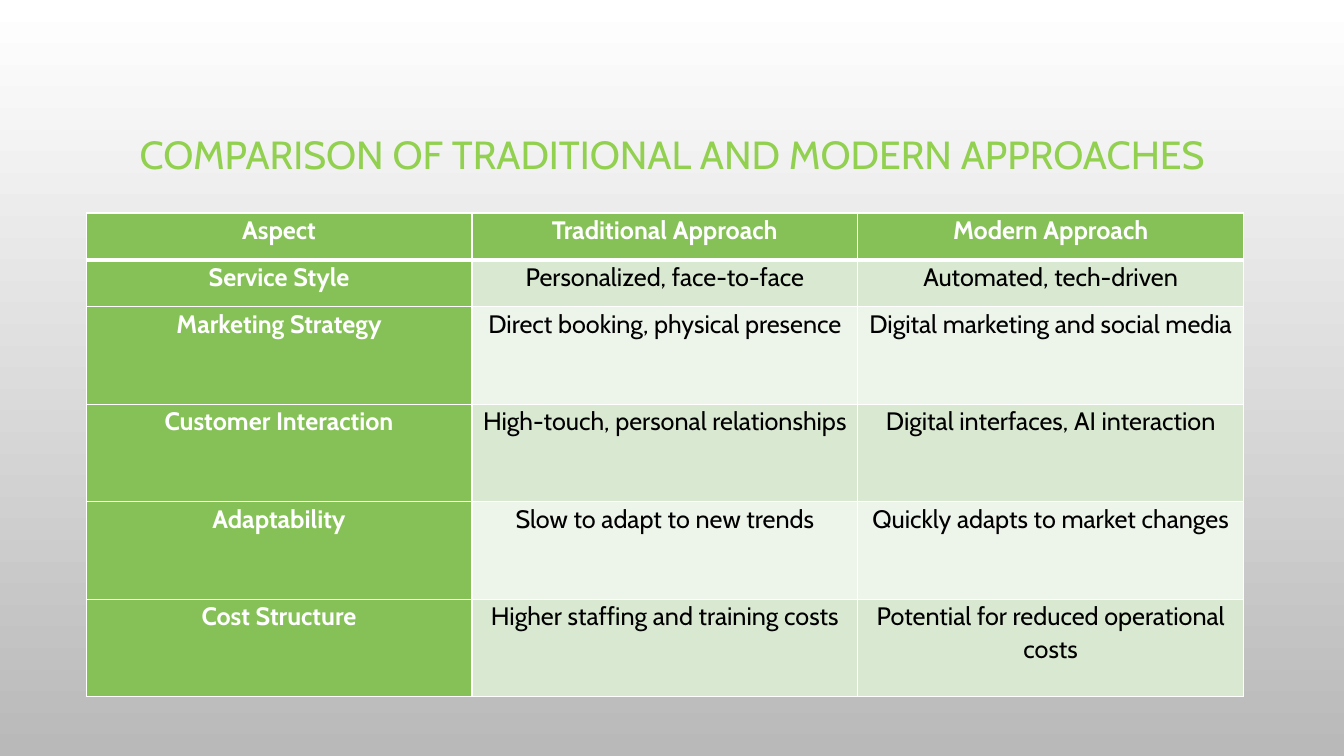
from lxml.etree import SubElement
from pptx import Presentation
from pptx.dml.color import RGBColor
from pptx.enum.text import MSO_ANCHOR, PP_ALIGN
from pptx.oxml.ns import qn
from pptx.util import Pt

COLORS = {
    "title": "92D050",
    "green": "86C157",
    "band_dark": "D9E9D1",
    "band_light": "EDF4EA",
    "white": "FFFFFF",
    "black": "000000",
    "gray": "B9B9B9",
}
ROWS = [
    ("Aspect", "Traditional Approach", "Modern Approach"),
    ("Service Style", "Personalized, face-to-face", "Automated, tech-driven"),
    ("Marketing Strategy", "Direct booking, physical presence", "Digital marketing and social media"),
    ("Customer Interaction", "High-touch, personal relationships", "Digital interfaces, AI interaction"),
    ("Adaptability", "Slow to adapt to new trends", "Quickly adapts to market changes"),
    ("Cost Structure", "Higher staffing and training costs", "Potential for reduced operational costs"),
]
ROW_HEIGHTS = [33.5, 33.5, 69.65, 69.65, 69.65, 69.65]
COLUMN_WIDTH = 275.6


def write_text(text_frame, text, line_spacing, font_format, color):
    text_frame.text = text
    paragraph = text_frame.paragraphs[0]
    paragraph.alignment = PP_ALIGN.CENTER
    paragraph.line_spacing = line_spacing
    font = paragraph.runs[0].font
    for name, value in font_format.items():
        setattr(font, name, value)
    font.color.rgb = RGBColor.from_string(COLORS[color])


def add_border(cell, side, width):
    line = SubElement(cell._tc.get_or_add_tcPr(), qn(f"a:ln{side}"), w=str(Pt(width)))
    fill = SubElement(line, qn("a:solidFill"))
    SubElement(fill, qn("a:srgbClr"), val=COLORS["white"])


presentation = Presentation()
presentation.slide_width = Pt(960)
presentation.slide_height = Pt(540)
slide = presentation.slides.add_slide(presentation.slide_layouts[5])

# Background gradient, top to bottom
background = slide.background.fill
background.gradient()
background.gradient_angle = 270
for stop, color, position in zip(background.gradient_stops, ("white", "gray"), (0, 1)):
    stop.color.rgb = RGBColor.from_string(COLORS[color])
    stop.position = position

# Title
title = slide.shapes.title
title.left, title.top, title.width, title.height = Pt(72), Pt(49), Pt(816), Pt(126)
title.text_frame.vertical_anchor = MSO_ANCHOR.MIDDLE
title.text_frame.word_wrap = True
write_text(title.text_frame, "COMPARISON OF TRADITIONAL AND MODERN APPROACHES", 0.9,
           {"name": "Cabin", "size": Pt(28)}, "title")

# Comparison table
table = slide.shapes.add_table(len(ROWS), 3, Pt(61.5), Pt(152.2),
                               Pt(3 * COLUMN_WIDTH), Pt(sum(ROW_HEIGHTS))).table
for column in table.columns:
    column.width = Pt(COLUMN_WIDTH)
for row, height in zip(table.rows, ROW_HEIGHTS):
    row.height = Pt(height)

for row_index, row_texts in enumerate(ROWS):
    band = "band_dark" if row_index % 2 else "band_light"
    for column_index, text in enumerate(row_texts):
        cell = table.cell(row_index, column_index)
        is_heading = row_index == 0 or column_index == 0
        cell_format = {
            "margin_left": Pt(5), "margin_right": Pt(5),
            "margin_top": Pt(0), "margin_bottom": Pt(0),
            "vertical_anchor": MSO_ANCHOR.TOP,
        }
        for name, value in cell_format.items():
            setattr(cell, name, value)
        write_text(cell.text_frame, text, 1.07,
                   {"name": "Cabin", "size": Pt(18), "bold": is_heading},
                   "white" if is_heading else "black")

        # The rule under the header row is thicker
        top_width = 3 if row_index == 1 else 1
        bottom_width = 3 if row_index == 0 else 1
        for side, width in zip("LRTB", (1, 1, top_width, bottom_width)):
            add_border(cell, side, width)
        cell.fill.solid()
        cell.fill.fore_color.rgb = RGBColor.from_string(COLORS["green" if is_heading else band])

presentation.save("out.pptx")
